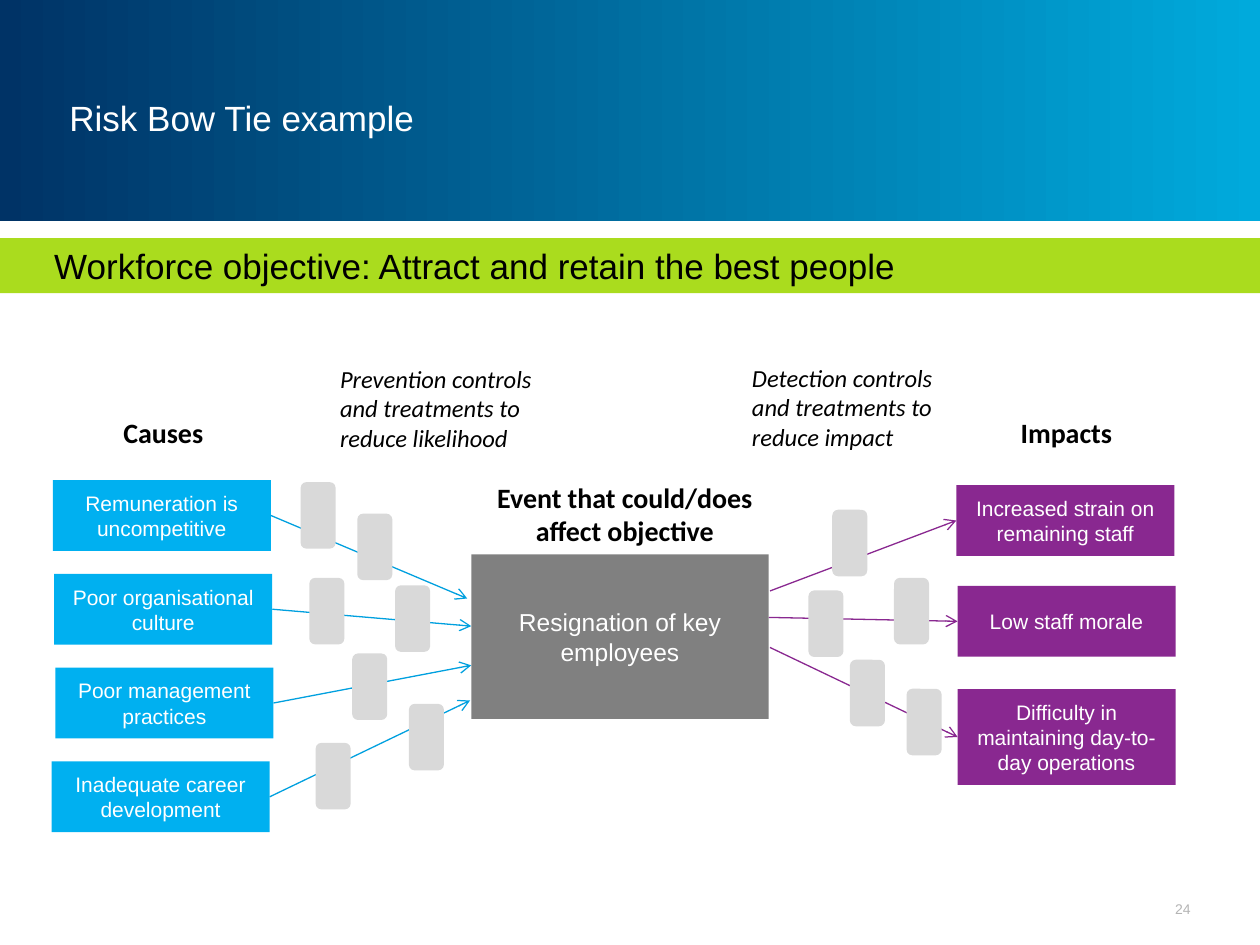
from lxml import etree
from pptx import Presentation
from pptx.dml.color import RGBColor
from pptx.enum.shapes import MSO_CONNECTOR, MSO_SHAPE
from pptx.enum.text import MSO_ANCHOR, PP_ALIGN
from pptx.oxml.ns import qn
from pptx.util import Pt

RECT, ROUNDED = MSO_SHAPE.RECTANGLE, MSO_SHAPE.ROUNDED_RECTANGLE
STRAIGHT = MSO_CONNECTOR.STRAIGHT
TOP, MIDDLE = MSO_ANCHOR.TOP, MSO_ANCHOR.MIDDLE
LEFT, CENTER, RIGHT = PP_ALIGN.LEFT, PP_ALIGN.CENTER, PP_ALIGN.RIGHT

COLORS = {
    "navy": "003366", "sky": "00AADC", "lime": "AADC1E",
    "cause": "00B0F0", "cause_arrow": "00A0DF", "impact": "892890",
    "event": "808080", "control": "D9D9D9", "page": "B4B4B4",
    "white": "FFFFFF", "black": "000000",
}
BOX_WIDTH, BOX_HEIGHT = 124.6, 40.5
CONTROL_WIDTH, CONTROL_HEIGHT = 20, 38
BOX_INSETS = (7.2, 5.76, 7.2, 5.76)
TEXT_INSETS = (7.2, 3.6, 7.2, 3.6)
TITLE_INSETS = (2.88, 2.88, 2.88, 2.88)


def color(name):
    return RGBColor.from_string(COLORS[name])


def write(shape, text, size, ink="white", font="Arial", bold=False, italic=False,
          align=CENTER, anchor=MIDDLE, insets=BOX_INSETS):
    frame = shape.text_frame
    frame.word_wrap = True
    frame.vertical_anchor = anchor
    frame.margin_left, frame.margin_top, frame.margin_right, frame.margin_bottom = map(Pt, insets)
    paragraph = frame.paragraphs[0]
    paragraph.alignment = align
    run = paragraph.add_run()
    run.text = text
    run.font.name, run.font.size = font, Pt(size)
    run.font.bold, run.font.italic = bold, italic
    run.font.color.rgb = color(ink)


def add_block(slide, left, top, width, height, fill, kind=RECT):
    block = slide.shapes.add_shape(kind, Pt(left), Pt(top), Pt(width), Pt(height))
    block.shadow.inherit = False
    block.line.fill.background()
    block.fill.solid()
    block.fill.fore_color.rgb = color(fill)
    return block


def add_text(slide, left, top, width, height, text, size, **style):
    area = slide.shapes.add_textbox(Pt(left), Pt(top), Pt(width), Pt(height))
    write(area, text, size, **style)


def add_heading(slide, left, top, width, height, text):
    add_text(slide, left, top, width, height, text, 16, ink="black", font="Calibri",
             bold=True, anchor=TOP, insets=TEXT_INSETS)


def add_arrow(slide, start, end, ink):
    arrow = slide.shapes.add_connector(STRAIGHT, *map(Pt, (*start, *end)))
    arrow.line.color.rgb = color(ink)
    arrow.line.width = Pt(0.75)
    etree.SubElement(arrow.line._get_or_add_ln(), qn("a:tailEnd"), type="arrow")
    etree.SubElement(arrow._element.spPr, qn("a:effectLst"))


def draw_header(slide, left, top, width, height):
    band = add_block(slide, left, top, width, height, "navy")
    band.fill.gradient()
    band.fill.gradient_angle = 0
    for stop, name in zip(band.fill.gradient_stops, ("navy", "sky")):
        stop.color.rgb = color(name)
    add_text(slide, left + 36.7, top + 21.6, 538.6, 90.7, "Risk Bow Tie example", 20,
             align=LEFT, insets=TITLE_INSETS)


def draw_objective(slide, left, top, width, height):
    banner = add_block(slide, left, top, width, height, "lime")
    write(banner, "Workforce objective: Attract and retain the best people", 20,
          ink="black", align=LEFT, anchor=TOP, insets=(31, 3.6, 7.2, 3.6))


def draw_controls(slide, left, top, note_box, note, centers):
    """Place the control bars on the arrows, with the note that explains them."""
    for x, y in centers:
        add_block(slide, left + x - CONTROL_WIDTH / 2, top + y - CONTROL_HEIGHT / 2,
                  CONTROL_WIDTH, CONTROL_HEIGHT, "control", ROUNDED)
    x, y, width = note_box
    add_text(slide, left + x, top + y, width, 58.3, note, 14, ink="black", font="Calibri",
             italic=True, align=LEFT, anchor=TOP, insets=TEXT_INSETS)


def draw_causes(slide, left, top):
    add_heading(slide, left + 15.4, top + 34, 95.8, 26.6, "Causes")
    causes = [
        ("Remuneration is uncompetitive", 0.2, (237, 142)),
        ("Poor organisational culture", 1, (239.3, 157.8)),
        ("Poor management practices", 1.7, (239.3, 180.2)),
        ("Inadequate career development", -0.5, (238.6, 200.3)),
    ]
    for row, (cause, shift, (tip_x, tip_y)) in enumerate(causes):
        x, y = left + shift, top + 74.3 + 53.6 * row
        write(add_block(slide, x, y, BOX_WIDTH, BOX_HEIGHT, "cause"), cause, 12)
        add_arrow(slide, (x + BOX_WIDTH, y + BOX_HEIGHT / 2),
                  (left + tip_x, top + tip_y), "cause_arrow")
    draw_controls(slide, left, top, (157.2, 4.5, 129),
                  "Prevention controls and treatments to reduce likelihood",
                  [(151.8, 94.5), (184.2, 112.5), (156.8, 149.2), (205.8, 153.5),
                   (181.3, 192.4), (160.4, 243.5), (213.7, 221.2)])


def draw_impacts(slide, left, top):
    add_heading(slide, left + 139.4, top + 34, 100, 26.6, "Impacts")
    impacts = [
        ("Increased strain on remaining staff", 126.5, 77.2, BOX_HEIGHT, (20, 137.7)),
        ("Low staff morale", 127.2, 134.8, BOX_HEIGHT, (19.2, 152.8)),
        ("Difficulty in maintaining day-to-day operations", 127.2, 193.8, 54.7, (20, 170)),
    ]
    for impact, x, y, height, (start_x, start_y) in impacts:
        write(add_block(slide, left + x, top + y, BOX_WIDTH, height, "impact"), impact, 12)
        add_arrow(slide, (left + start_x, top + start_y),
                  (left + x, top + y + height / 2), "impact")
    draw_controls(slide, left, top, (2.6, 3.8, 121),
                  "Detection controls and treatments to reduce impact",
                  [(65.6, 110.3), (100.9, 149.2), (52, 156.4), (75.7, 196), (108.1, 212.6)])


def draw_event(slide, left, top, width, height):
    add_heading(slide, left + 5, top - 46, 165.6, 46, "Event that could/does affect objective")
    event = add_block(slide, left, top, width, height, "event")
    write(event, "Resignation of key employees", 14, insets=(0, 0, 0, 0))


def main():
    deck = Presentation()
    deck.slide_width, deck.slide_height = Pt(720), Pt(540)
    slide = deck.slides.add_slide(deck.slide_layouts[6])
    draw_header(slide, 0, 0, 720, 126.5)
    draw_objective(slide, 0, 136, 720, 31.5)
    draw_causes(slide, 30, 200)
    draw_impacts(slide, 420, 200)
    draw_event(slide, 269.3, 316.8, 170, 94)
    add_text(slide, 626.4, 510.5, 56.9, 17.3, "24", 8, ink="page", align=RIGHT,
             insets=TITLE_INSETS)
    deck.save("out.pptx")


if __name__ == "__main__":
    main()
